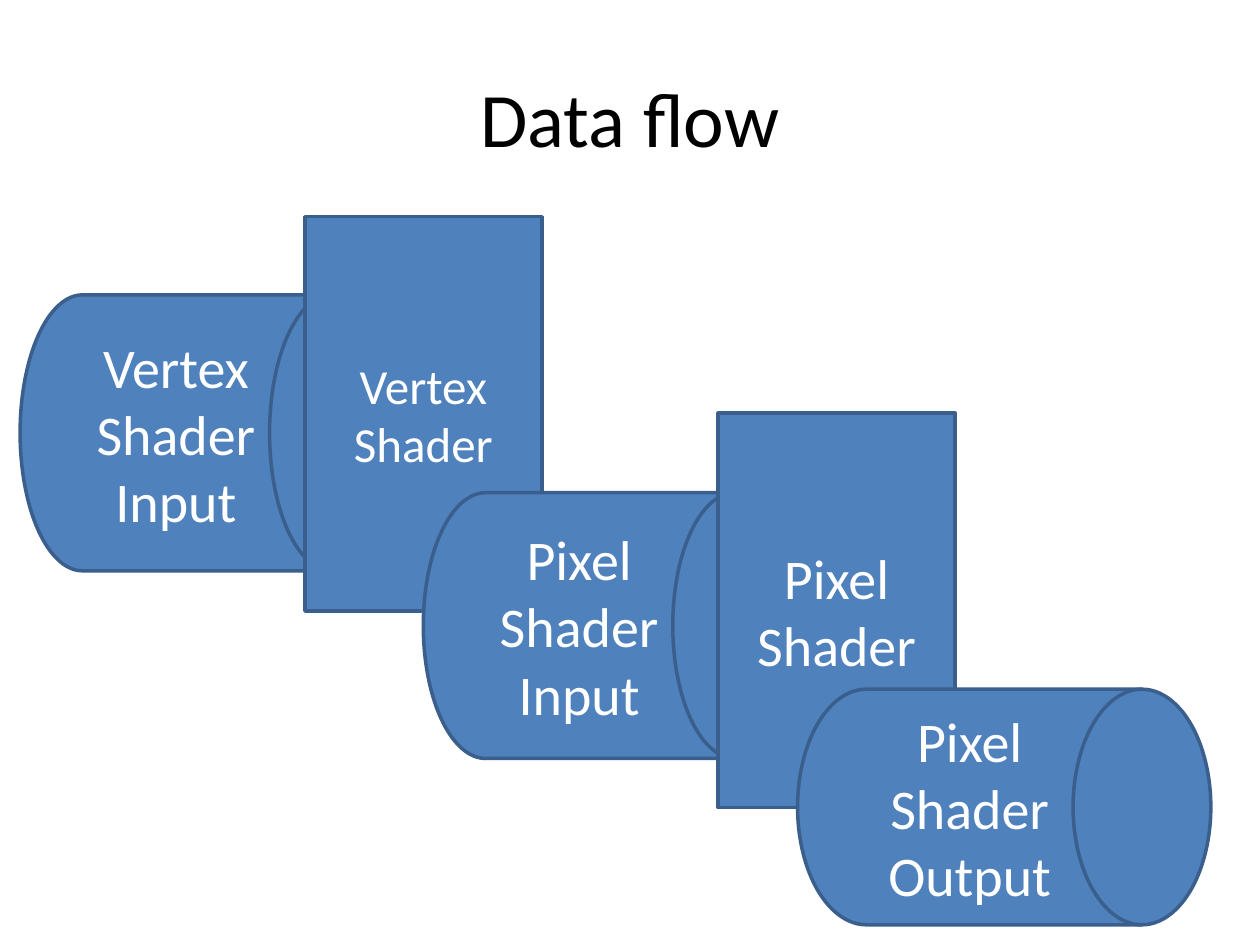
from dataclasses import dataclass

from pptx import Presentation
from pptx.dml.color import RGBColor
from pptx.enum.shapes import MSO_SHAPE as Preset
from pptx.enum.text import MSO_ANCHOR as Anchor, PP_ALIGN as Align
from pptx.util import Inches, Pt

COLORS = {"fill": "4F81BD", "outline": "3A5F8C", "label": "FFFFFF", "title": "000000"}
FRAME_FORMAT = {"word_wrap": True, "vertical_anchor": Anchor.MIDDLE}
BUFFER = Preset.FLOWCHART_DIRECT_ACCESS_STORAGE
STAGE = Preset.FLOWCHART_PROCESS


@dataclass(frozen=True)
class Step:
    label: str
    kind: Preset
    left: float
    top: float
    width: float
    height: float
    size: int = 32


STEPS = [
    Step("Vertex Shader Input", BUFFER, 0.16, 2.34, 2.97, 2.19),
    Step("Vertex Shader", STAGE, 2.42, 1.72, 1.88, 3.13, 28),
    Step("Pixel Shader Input", BUFFER, 3.36, 3.91, 2.97, 2.11),
    Step("Pixel Shader", STAGE, 5.7, 3.28, 1.88, 3.13),
    Step("Pixel Shader Output", BUFFER, 6.33, 5.47, 3.28, 1.87),
]


def color(role: str) -> RGBColor:
    return RGBColor.from_string(COLORS[role])


def set_all(target, values: dict) -> None:
    for attribute, value in values.items():
        setattr(target, attribute, value)


def write(holder, wording: str, size: int, role: str) -> None:
    frame = holder.text_frame
    frame.text = wording
    set_all(frame, FRAME_FORMAT)
    paragraph = frame.paragraphs[0]
    paragraph.alignment = Align.CENTER
    font = paragraph.runs[0].font
    set_all(font, {"name": "Calibri", "size": Pt(size)})
    font.color.rgb = color(role)


def draw_step(slide, step: Step) -> None:
    bounds = map(Inches, (step.left, step.top, step.width, step.height))
    block = slide.shapes.add_shape(step.kind, *bounds)
    block.shadow.inherit = False
    block.fill.solid()
    block.fill.fore_color.rgb = color("fill")
    block.line.color.rgb = color("outline")
    block.line.width = Pt(2)
    write(block, step.label, step.size, "label")


def main() -> None:
    deck = Presentation()
    set_all(deck, {"slide_width": Inches(10), "slide_height": Inches(7.5)})
    slide = deck.slides.add_slide(deck.slide_layouts[5])
    title = slide.shapes.title
    set_all(title, {
        "left": Inches(0.5), "top": Inches(0.3),
        "width": Inches(9), "height": Inches(1.25),
    })
    write(title, "Data flow", 44, "title")
    for step in STEPS:
        draw_step(slide, step)
    deck.save("out.pptx")


if __name__ == "__main__":
    main()
